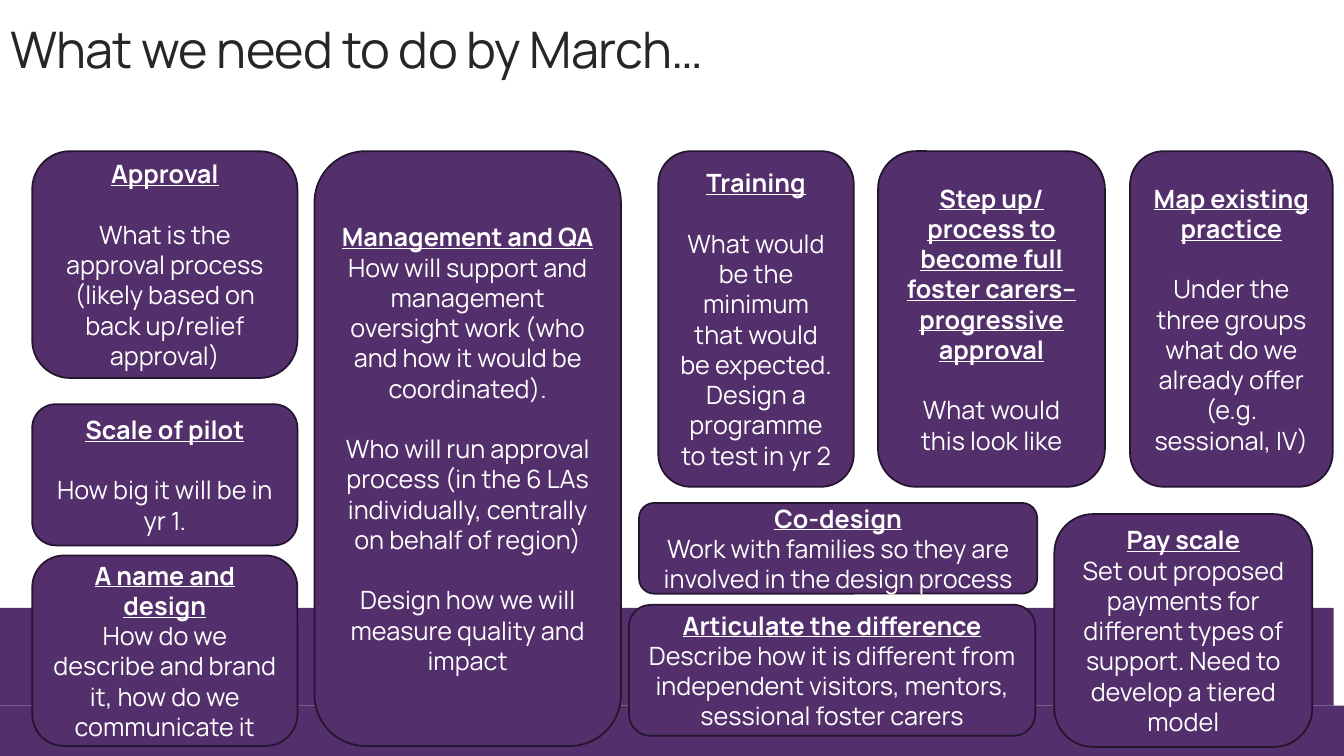
from dataclasses import dataclass

from pptx import Presentation
from pptx.dml.color import RGBColor
from pptx.enum.shapes import MSO_SHAPE
from pptx.enum.text import MSO_ANCHOR, MSO_AUTO_SIZE, PP_ALIGN
from pptx.util import Inches, Pt

RECT, CARD = MSO_SHAPE.RECTANGLE, MSO_SHAPE.ROUNDED_RECTANGLE
MIDDLE, BOTTOM = MSO_ANCHOR.MIDDLE, MSO_ANCHOR.BOTTOM
LEFT, CENTER = PP_ALIGN.LEFT, PP_ALIGN.CENTER
NO_AUTOFIT = MSO_AUTO_SIZE.NONE
TITLE_ONLY = 5


@dataclass(frozen=True)
class Theme:
    font: str = "Manrope"
    purple: RGBColor = RGBColor(0x53, 0x2F, 0x6B)
    outline: RGBColor = RGBColor(0x24, 0x15, 0x2F)
    white: RGBColor = RGBColor(0xFF, 0xFF, 0xFF)
    ink: RGBColor = RGBColor(0x26, 0x26, 0x26)
    title_size: float = 36
    text_size: float = 18
    line_width: float = 1.25
    gap: float = 21.6


def write(p, text, *, font, size, color, bold=False, underline=False,
          align=CENTER, before=0, leading=None, tracking=None):
    """Fill a paragraph with one formatted run; tracking is in points."""
    p.alignment = align
    p.space_before, p.space_after = Pt(before), Pt(0)
    if leading:
        p.line_spacing = leading
    r = p.add_run()
    r.text = text
    r.font.name, r.font.size = font, Pt(size)
    r.font.bold, r.font.underline = bold, underline
    r.font.color.rgb = color
    if tracking is not None:
        r.font._element.set("spc", str(round(tracking * 100)))


class Deck:
    """Holds the theme and current slide; boxes are percentages of the slide."""

    def __init__(self, theme):
        self.theme = theme
        self.prs = Presentation()
        self.prs.slide_width, self.prs.slide_height = Inches(13.333), Inches(7.5)
        self.slide = self.prs.slides.add_slide(self.prs.slide_layouts[TITLE_ONLY])

    def place(self, box):
        w, h = self.prs.slide_width, self.prs.slide_height
        return [int(share * side / 100) for share, side in zip(box, (w, h, w, h))]

    def title(self, text, box):
        sp = self.slide.shapes.title
        sp.left, sp.top, sp.width, sp.height = self.place(box)
        tf = sp.text_frame
        tf.word_wrap, tf.auto_size, tf.vertical_anchor = True, NO_AUTOFIT, BOTTOM
        t = self.theme
        write(tf.paragraphs[0], text, font=t.font, size=t.title_size, color=t.ink,
              align=LEFT, leading=0.85, tracking=-0.5)

    def shape(self, kind, box):
        sp = self.slide.shapes.add_shape(kind, *self.place(box))
        sp.shadow.inherit = False
        sp.fill.solid()
        sp.fill.fore_color.rgb = self.theme.purple
        return sp

    def band(self, box):
        self.shape(RECT, box).line.fill.background()

    def card(self, box, heading, *body, spaced=False):
        """Draw a heading and body paragraphs; spaced opens a gap under the heading."""
        t = self.theme
        sp = self.shape(CARD, box)
        sp.line.color.rgb, sp.line.width = t.outline, Pt(t.line_width)
        tf = sp.text_frame
        tf.word_wrap, tf.vertical_anchor = True, MIDDLE
        style = dict(font=t.font, size=t.text_size, color=t.white)
        write(tf.paragraphs[0], heading, bold=True, underline=True, **style)
        for i, text in enumerate(body):
            write(tf.add_paragraph(), text, before=t.gap if spaced or i else 0, **style)

    def save(self):
        self.prs.save("out.pptx")


def main():
    deck = Deck(Theme())
    deck.title("What we need to do by March…", (0, 0, 100, 11.07))
    deck.band((0, 93.33, 100, 6.67))
    deck.band((0, 80.4, 99.23, 12.93))

    top, tall = 20, 44.4
    left, left_width = 2.4, 19.73

    deck.card((left, top, left_width, 30), "Approval",
              "What is the approval process (likely based on back up/relief approval)",
              spaced=True)
    deck.card((left, 53.47, left_width, 18.67), "Scale of pilot",
              "How big it will be in yr 1.", spaced=True)
    deck.card((left, 73.47, left_width, 25.2), "A name and design",
              "How do we describe and brand it, how do we communicate it")

    deck.card((23.4, top, 22.8, 78.67), "Management and QA",
              "How will support and management oversight work "
              "(who and how it would be coordinated).",
              "Who will run approval process (in the 6 LAs individually, "
              "centrally on behalf of region)",
              "Design how we will measure quality and impact")

    deck.card((48.98, top, 14.55, tall), "Training",
              "What would be the minimum that would be expected. "
              "Design a programme to test in yr 2", spaced=True)
    deck.card((65.33, top, 16.88, tall),
              "Step up/ process to become full foster carers– progressive approval",
              "What would this look like", spaced=True)
    deck.card((84.08, top, 15.08, tall), "Map existing practice",
              "Under the three groups what do we already offer (e.g. sessional, IV)",
              spaced=True)

    deck.card((47.55, 66.53, 29.63, 12), "Co-design",
              "Work with families so they are involved in the design process")
    deck.card((46.8, 80, 30.23, 17.33), "Articulate the difference",
              "Describe how it is different from independent visitors, mentors, "
              "sessional foster carers")
    deck.card((78.45, 68, 19.2, 30.8), "Pay scale",
              "Set out proposed payments for different types of support. "
              "Need to develop a tiered model")
    deck.save()


if __name__ == "__main__":
    main()
